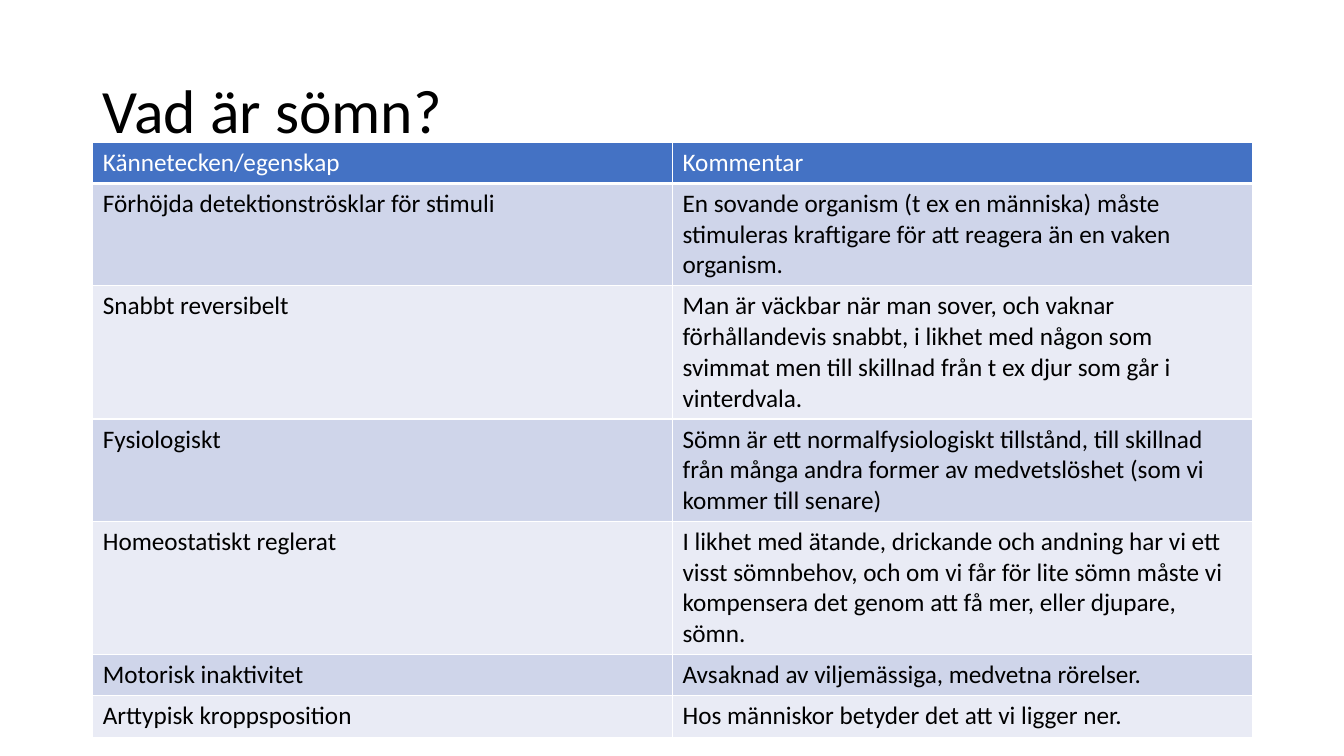
from lxml.etree import SubElement
from pptx import Presentation
from pptx.dml.color import RGBColor
from pptx.enum.text import MSO_ANCHOR, PP_ALIGN
from pptx.oxml.ns import qn
from pptx.util import Inches, Pt

HEAD, BANDS = "4472C4", ("CFD5EA", "E9EBF5")
WHITE, BLACK = "FFFFFF", "000000"
ROWS = [
    ("Kännetecken/egenskap", "Kommentar"),
    ("Förhöjda detektionströsklar för stimuli",
     "En sovande organism (t ex en människa) måste stimuleras kraftigare "
     "för att reagera än en vaken organism."),
    ("Snabbt reversibelt",
     "Man är väckbar när man sover, och vaknar förhållandevis snabbt, i likhet "
     "med någon som svimmat men till skillnad från t ex djur som går i vinterdvala."),
    ("Fysiologiskt",
     "Sömn är ett normalfysiologiskt tillstånd, till skillnad från många andra "
     "former av medvetslöshet (som vi kommer till senare)"),
    ("Homeostatiskt reglerat",
     "I likhet med ätande, drickande och andning har vi ett visst sömnbehov, och "
     "om vi får för lite sömn måste vi kompensera det genom att få mer, eller "
     "djupare, sömn."),
    ("Motorisk inaktivitet", "Avsaknad av viljemässiga, medvetna rörelser."),
    ("Arttypisk kroppsposition", "Hos människor betyder det att vi ligger ner."),
]


def paint(fill, color):
    """Fill solidly with a hex colour."""
    fill.solid()
    fill.fore_color.rgb = RGBColor.from_string(color)


def style(frame, size, color):
    """Format every run of a text frame."""
    for para in frame.paragraphs:
        para.alignment = PP_ALIGN.LEFT
        for run in para.runs:
            run.font.name = "Calibri"
            run.font.size = Pt(size)
            run.font.bold = False
            paint(run.font.fill, color)


def add_title(slide, text):
    """Place and format the title."""
    title = slide.shapes.title
    title.left, title.top = Inches(0.92), Inches(0.4)
    title.width, title.height = Inches(11.5), Inches(1.45)
    frame = title.text_frame
    frame.text = text
    frame.vertical_anchor = MSO_ANCHOR.MIDDLE
    frame.paragraphs[0].line_spacing = 0.9
    style(frame, 44, BLACK)


def edge(cell, base):
    """Draw white borders, with the given bottom width in points."""
    props = cell._tc.get_or_add_tcPr()
    for side, width in (("L", 1), ("R", 1), ("T", 1), ("B", base)):
        line = SubElement(props, qn(f"a:ln{side}"), w=str(Pt(width)))
        solid = SubElement(line, qn("a:solidFill"))
        SubElement(solid, qn("a:srgbClr"), val=WHITE)


def add_grid(slide, rows):
    """Add the banded table under its header row."""
    high = Inches(0.41)
    grid = slide.shapes.add_table(len(rows), 2, Inches(0.92), Inches(1.41),
                                  Inches(11.5), high * len(rows)).table
    for r, texts in enumerate(rows):
        grid.rows[r].height = high
        for c, text in enumerate(texts):
            cell = grid.cell(r, c)
            cell.text_frame.text = text
            style(cell.text_frame, 18, BLACK if r else WHITE)
            edge(cell, 1 if r else 3)
            paint(cell.fill, BANDS[(r - 1) % 2] if r else HEAD)


def main():
    """Build and save the slide."""
    deck = Presentation()
    deck.slide_width, deck.slide_height = Inches(13.33), Inches(7.5)
    slide = deck.slides.add_slide(deck.slide_layouts[5])
    add_title(slide, "Vad är sömn?")
    add_grid(slide, ROWS)
    deck.save("out.pptx")


if __name__ == "__main__":
    main()
